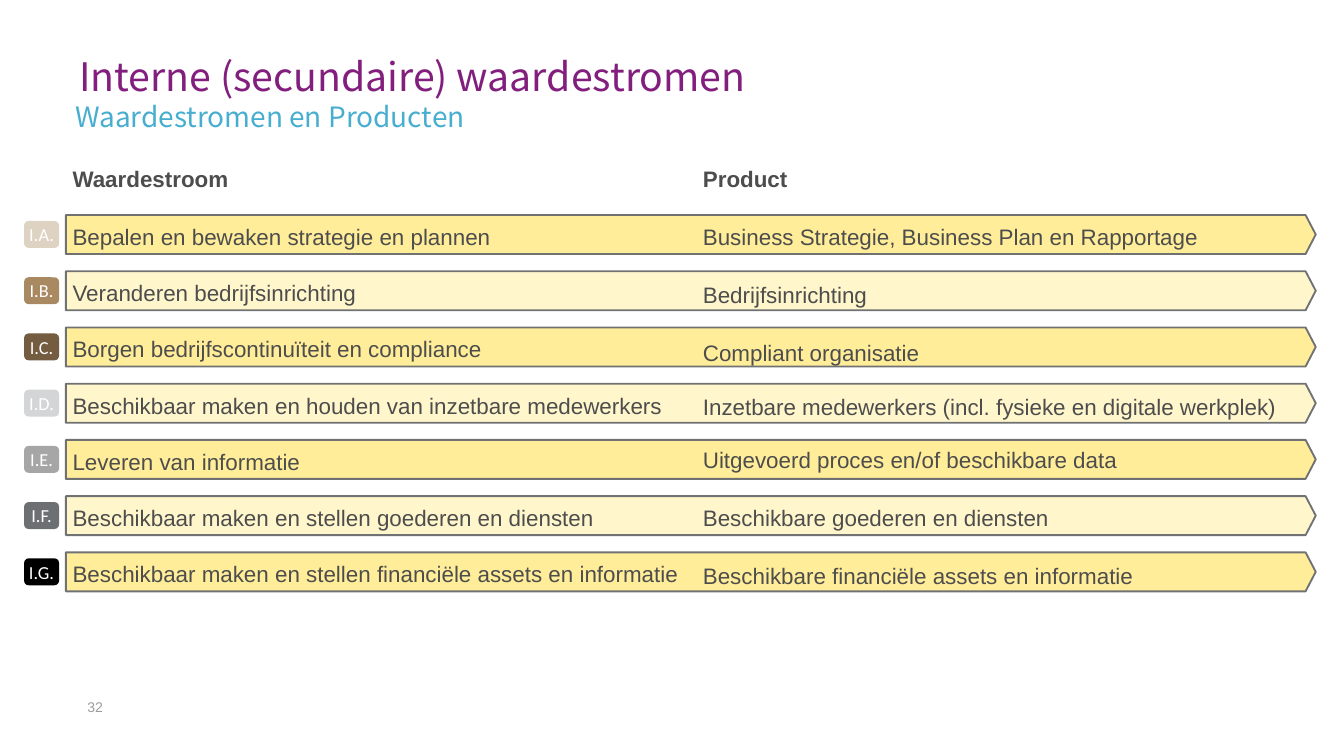
from pptx import Presentation, util as u
from pptx.dml.color import RGBColor
from pptx.enum import shapes, text

STREAMS = [
    ("I.A.", "DED2C3", "Bepalen en bewaken strategie en plannen",
     "Business Strategie, Business Plan en Rapportage"),
    ("I.B.", "A98962", "Veranderen bedrijfsinrichting", "Bedrijfsinrichting"),
    ("I.C.", "735C3F", "Borgen bedrijfscontinuïteit en compliance",
     "Compliant organisatie"),
    ("I.D.", "D4D5D6", "Beschikbaar maken en houden van inzetbare medewerkers",
     "Inzetbare medewerkers (incl. fysieke en digitale werkplek)"),
    ("I.E.", "A6A6A6", "Leveren van informatie",
     "Uitgevoerd proces en/of beschikbare data"),
    ("I.F.", "6D7073", "Beschikbaar maken en stellen goederen en diensten",
     "Beschikbare goederen en diensten"),
    ("I.G.", "000000", "Beschikbaar maken en stellen financiële assets en informatie",
     "Beschikbare financiële assets en informatie"),
]
LABELS, BADGE_FILLS, NAMES, PRODUCTS = zip(*STREAMS)

THEME = {
    "title": {"name": "Noto Sans CJK TC", "size": 21, "color": "821E7D"},
    "subtitle": {"name": "Noto Sans CJK TC", "size": 15, "color": "48AED0"},
    "head": {"name": "Arial", "size": 12, "color": "4D4D4D", "bold": True},
    "body": {"name": "Arial", "size": 12, "color": "4D4D4D", "bold": False},
    "badge": {"name": "Calibri", "size": 9.8, "color": "FFFFFF"},
    "number": {"name": "Arial", "size": 7.5, "color": "9E9C9E"},
    "bars": ("FFED99", "FFF6CC"),
    "outline": "707173",
}

SLIDE_WIDTH = 10
SLIDE_HEIGHT = SLIDE_WIDTH * 9 / 16
COLUMN_TOP, COLUMN_HEIGHT = 1.13, 3.73
COLUMNS = [
    (0.54, 7.37, "Waardestroom", NAMES, [3.5] * 7),
    (5.23, 4.72, "Product", PRODUCTS, [4.5, 4.5, 2, 2, 4.5, 4.5, 4.5]),
]
HEADINGS = [
    ((0.59, 0.35, 7.28, 0.39), "Interne (secundaire) waardestromen", "title", u.Pt(28)),
    ((0.56, 0.69, 8.32, 0.24), "Waardestromen en Producten", "subtitle", 1.2),
    ((0.65, 5.2, 0.39, 0.24), "32", "number", 1.0),
]
FIRST_ROW, LAST_ROW = 1.6, 4.11
PITCH = (LAST_ROW - FIRST_ROW) / (len(STREAMS) - 1)
BAR_LEFT, BAR_WIDTH, BAR_HEIGHT = 0.49, 9.3, 0.29
BADGE_LEFT, BADGE_WIDTH, BADGE_HEIGHT = 0.18, 0.26, 0.2


def apply(obj, values):
    for key, value in values.items():
        setattr(obj, key, value)


def write(p, words, style, **layout):
    apply(p, layout)
    r = p.add_run()
    r.text = words
    fmt = dict(THEME[style])
    r.font.color.rgb = RGBColor.from_string(fmt.pop("color"))
    apply(r.font, fmt | {"size": u.Pt(fmt["size"])})


def set_frame(tf, side=0, **extra):
    apply(tf, {"word_wrap": True, "margin_left": 0, "margin_right": 0,
               "margin_top": u.Inches(side), "margin_bottom": u.Inches(side)} | extra)
    return tf


def add_text(s, box):
    return set_frame(s.shapes.add_textbox(*map(u.Inches, box)).text_frame)


def add_block(s, kind, box, fill, line=None):
    sp = s.shapes.add_shape(kind, *map(u.Inches, box))
    sp.shadow.inherit = False
    sp.fill.solid()
    sp.fill.fore_color.rgb = RGBColor.from_string(fill)
    if line:
        sp.line.color.rgb = RGBColor.from_string(line)
        sp.line.width = u.Pt(1)
    else:
        sp.line.fill.background()
    return sp


def add_column(s, left, width, head, entries, gaps):
    tf = add_text(s, (left, COLUMN_TOP, width, COLUMN_HEIGHT))
    write(tf.paragraphs[0], head, "head", line_spacing=1.5,
          space_before=u.Pt(0), space_after=u.Pt(4.5))
    for entry, gap in zip(entries, gaps):
        write(tf.add_paragraph(), entry, "body", line_spacing=1.5,
              space_before=u.Pt(5), space_after=u.Pt(gap))


def main():
    prs = Presentation()
    prs.slide_width, prs.slide_height = u.Inches(SLIDE_WIDTH), u.Inches(SLIDE_HEIGHT)
    s = prs.slides.add_slide(prs.slide_layouts[6])

    for box, words, style, spacing in HEADINGS:
        write(add_text(s, box).paragraphs[0], words, style, line_spacing=spacing)

    tops = [FIRST_ROW + i * PITCH for i in range(len(STREAMS))]
    for i, top in enumerate(tops):
        bar = add_block(s, shapes.MSO_SHAPE.PENTAGON,
                        (BAR_LEFT, top, BAR_WIDTH, BAR_HEIGHT),
                        THEME["bars"][i % 2], THEME["outline"])
        bar.adjustments[0] = 0.26

    for column in COLUMNS:
        add_column(s, *column)

    inset = (BAR_HEIGHT - BADGE_HEIGHT) / 2
    for top, label, fill in zip(tops, LABELS, BADGE_FILLS):
        badge = add_block(s, shapes.MSO_SHAPE.ROUNDED_RECTANGLE,
                          (BADGE_LEFT, top + inset, BADGE_WIDTH, BADGE_HEIGHT), fill)
        tf = set_frame(badge.text_frame, 0.05,
                       vertical_anchor=text.MSO_ANCHOR.MIDDLE)
        write(tf.paragraphs[0], label, "badge", alignment=text.PP_ALIGN.CENTER)

    prs.save("out.pptx")


if __name__ == "__main__":
    main()
